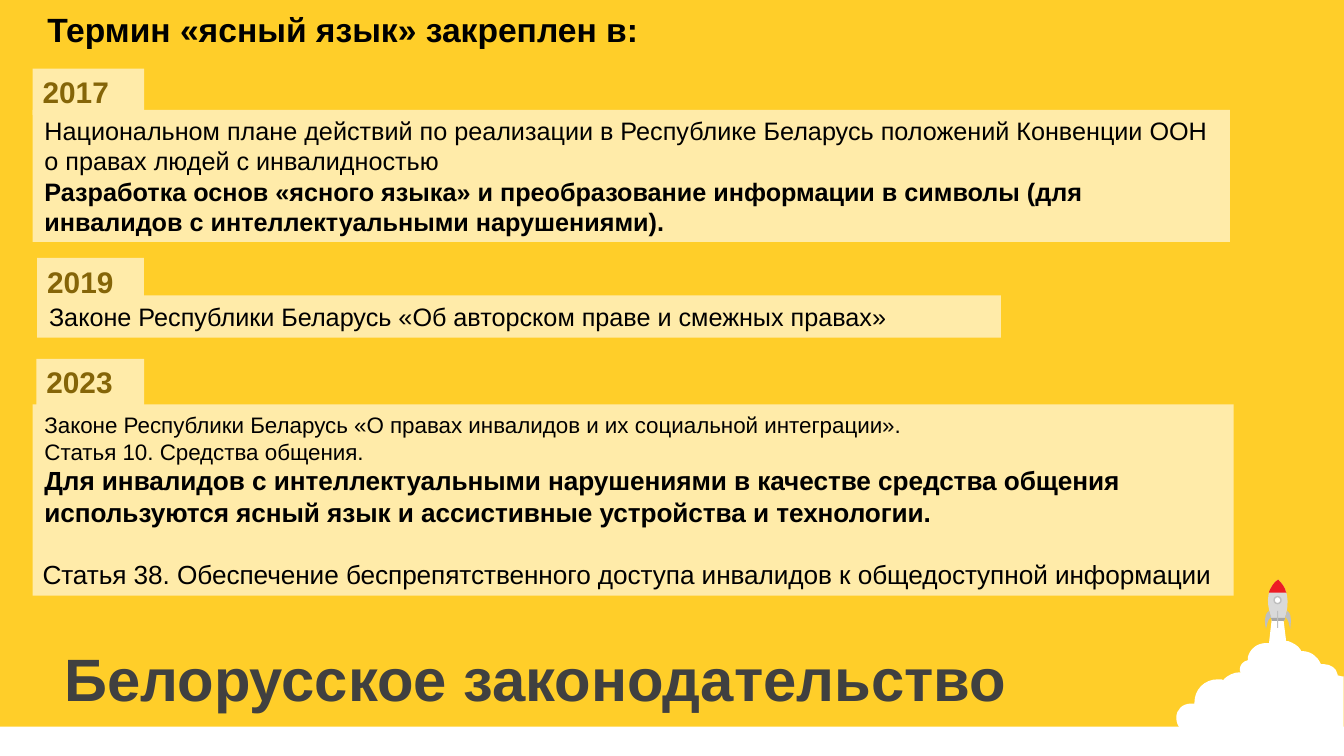
from pptx import Presentation
from pptx.dml.color import RGBColor
from pptx.enum.shapes import MSO_SHAPE as Kind
from pptx.enum.text import MSO_ANCHOR as Anchor
from pptx.oxml.ns import qn
from pptx.util import Pt
from lxml.etree import SubElement as Sub

BLACK, GOLD, GREY, CREAM, WHITE = "000000", "856508", "404040", "FFEBA9", "FFFFFF"


def paint(fill, tint):
    fill.solid()
    fill.fore_color.rgb = RGBColor.from_string(tint)


def block(kind, spot, tint):
    item = slide.shapes.add_shape(kind, *[Pt(n) for n in spot])
    item.shadow.inherit = False
    item.line.fill.background()
    paint(item.fill, tint)
    return item


deck = Presentation()
deck.slide_width, deck.slide_height = Pt(960), Pt(540)
slide = deck.slides.add_slide(deck.slide_layouts[6])
paint(slide.background.fill, "FFCE29")
block(Kind.RECTANGLE, (0, 519, 960, 21), WHITE)

cloud = [
    (1262, 612), (1273, 612), (1276, 636), (1278, 636),
    (1283, 638, 1287, 640, 1290, 644), (1291, 646), (1292, 646),
    (1300, 646, 1307, 651, 1310, 658), (1311, 659),
    (1311, 659), (1312, 659, 1313, 659, 1314, 659),
    (1320, 659, 1326, 663, 1327, 669),
    (1327, 670), (1331, 671), (1333, 671), (1333, 746), (1330, 746),
    (1325, 746, 1320, 745, 1316, 742), (1314, 741), (1313, 742),
    (1311, 744, 1308, 745, 1305, 745), (1301, 745, 1297, 743, 1294, 741),
    (1293, 739), (1292, 739), (1290, 743, 1285, 746, 1280, 746),
    (1276, 746, 1272, 744, 1269, 742), (1268, 740), (1265, 742),
    (1260, 746, 1254, 748, 1246, 748), (1230, 748, 1223, 741, 1217, 735),
    (1215, 737, 1209, 739, 1205, 738), (1200, 736, 1192, 733, 1190, 726),
    (1190, 724), (1190, 725), (1188, 726, 1185, 727, 1182, 727),
    (1173, 727, 1167, 721, 1167, 712), (1167, 704, 1173, 698, 1182, 698),
    (1183, 698, 1184, 698, 1185, 698), (1185, 698), (1185, 697),
    (1185, 684, 1195, 674, 1208, 674), (1209, 674, 1211, 674, 1212, 674),
    (1214, 675), (1214, 674), (1218, 670, 1224, 667, 1230, 667),
    (1231, 667), (1230, 666), (1230, 665, 1230, 665, 1230, 664),
    (1230, 660, 1233, 656, 1238, 655), (1238, 655), (1238, 652),
    (1240, 644, 1247, 638, 1256, 638), (1259, 638), (1262, 612),
]
hull = [(1262, 616), (1258, 603, 1253, 587, 1268, 575),
        (1282, 588, 1277, 606, 1274, 616), (1262, 616)]
skirt = [(1261, 613), (1275, 613), (1274, 616), (1262, 616)]
nose = [(1268, 575), (1272, 579, 1275, 583, 1276, 588), (1277, 588),
        (1259, 588), (1259, 587), (1261, 583, 1263, 578, 1268, 575)]
left = [(1259, 606), (1261, 612), (1257, 615, 1257, 621, 1256, 624),
        (1255, 620, 1253, 610, 1259, 606)]
right = [(1277, 606), (1275, 612), (1279, 615, 1279, 621, 1280, 624),
         (1280, 620, 1283, 610, 1277, 606)]

unit = Pt(0.72)
for route, tint in [(cloud, WHITE), (hull, "D9D9D9"), (skirt, "A6A6A6"),
                    (nose, "ED1C24"), (left, "BFBFBF"), (right, "BFBFBF")]:
    ends = [(leg[-2] * unit, leg[-1] * unit) for leg in route]
    pen = slide.shapes.build_freeform(*ends[0])
    pen.add_line_segments(ends[1:], close=True)
    form = pen.convert_to_shape()
    form.shadow.inherit = False
    form.line.fill.background()
    paint(form.fill, tint)
    for leg, node in zip(route[1:], list(form._element.iter(qn("a:lnTo")))):
        if len(leg) == 2:
            continue
        curve = node.makeelement(qn("a:cubicBezTo"))
        for x, y in zip(leg[::2], leg[1::2]):
            Sub(curve, qn("a:pt"), x=str(x * unit - form.left),
                y=str(y * unit - form.top))
        node.getparent().replace(node, curve)

port = block(Kind.OVAL, (910.1, 426.2, 5, 5), WHITE)
paint(port.line.fill, "BFBFBF")
port.line.width = Pt(1)
block(Kind.RECTANGLE, (912.2, 436.3, 0.9, 12.2), "BFBFBF")

panels = [
    ((13, 2.9, 466.6, 36), None, BLACK, [
        ("Термин «ясный язык» закреплен в:", 24, True, 13.7, 0)]),
    ((23.3, 78.5, 855.2, 94.3), CREAM, BLACK, [
        ("Национальном плане действий по реализации в Республике Беларусь положений Конвенции ООН", 18, False, 1.4, 0),
        ("о правах людей с инвалидностью", 18, False, 1.4, 0),
        ("Разработка основ «ясного языка» и преобразование информации в символы (для", 18, True, 1.4, 0),
        ("инвалидов с интеллектуальными нарушениями).", 18, True, 1.4, 0)]),
    ((23.3, 49, 79.7, 33.1), CREAM, GOLD, [("2017", 21.33, True, 0, 0)]),
    ((26.6, 211, 688.3, 30.2), CREAM, BLACK, [
        ("Законе Республики Беларусь «Об авторском праве и смежных правах»", 18, False, 1.4, 0)]),
    ((26.6, 184.3, 76.3, 33.1), CREAM, GOLD, [("2019", 21.33, True, 0, 0)]),
    ((23.3, 288.9, 858, 136.6), CREAM, BLACK, [
        ("Законе Республики Беларусь «О правах инвалидов и их социальной интеграции».", 16, False, 1.4, 0),
        ("Статья 10. Средства общения.", 16, False, 1.4, 0),
        ("Для инвалидов с интеллектуальными нарушениями в качестве средства общения", 18.67, True, 1.4, 0),
        ("используются ясный язык и ассистивные устройства и технологии.", 18.67, True, 1.4, 0),
        ("Статья 38. Обеспечение беспрепятственного доступа инвалидов к общедоступной информации", 18.67, False, 0, 22)]),
    ((26, 256.3, 77, 33.1), CREAM, GOLD, [("2023", 21.33, True, 0, 0)]),
    ((38.9, 450, 842.4, 68.4), None, GREY, [
        ("Белорусское законодательство", 42.67, True, 0, 0)]),
]
for spot, tint, ink, lines in panels:
    if tint:
        item = block(Kind.RECTANGLE, spot, tint)
    else:
        item = slide.shapes.add_textbox(*[Pt(n) for n in spot])
    frame = item.text_frame
    frame.word_wrap = True
    frame.vertical_anchor = Anchor.MIDDLE
    for rank, (words, size, bold, inset, gap) in enumerate(lines):
        para = frame.add_paragraph() if rank else frame.paragraphs[0]
        props = para._p.get_or_add_pPr()
        props.set("algn", "l")
        props.set("marL", str(Pt(inset)))
        para.space_before = Pt(gap)
        run = para.add_run()
        run.text = words
        run.font.name = "Arial"
        run.font.size = Pt(size)
        run.font.bold = bold
        paint(run.font.fill, ink)

deck.save("out.pptx")
